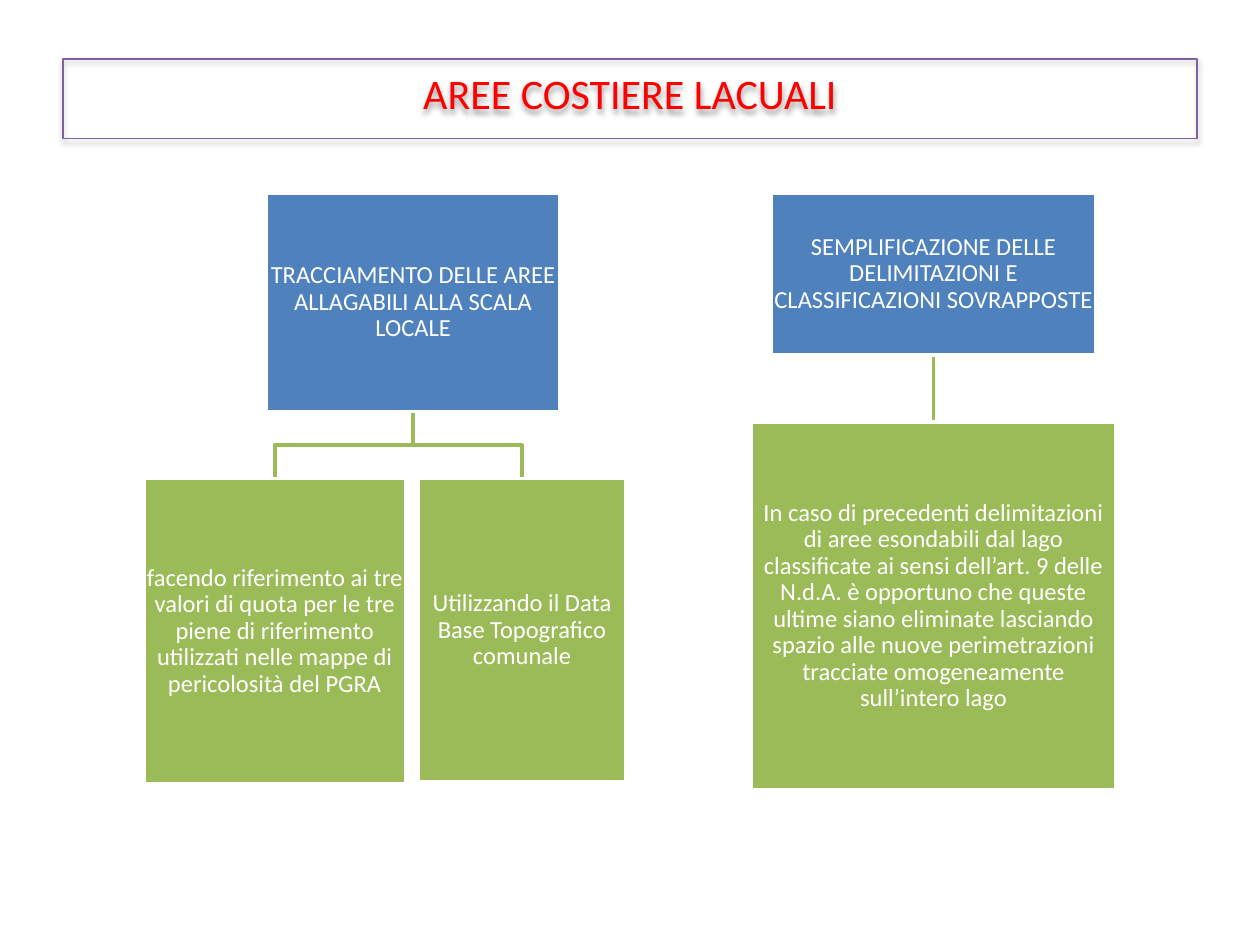
from lxml.etree import SubElement
from pptx import Presentation
from pptx.dml.color import RGBColor
from pptx.enum.shapes import MSO_CONNECTOR as Connector, MSO_SHAPE as Shape
from pptx.enum.text import MSO_ANCHOR as Anchor, PP_ALIGN as Align
from pptx.oxml.ns import qn
from pptx.util import Cm, Pt

# Content: lengths in cm
COLORS = {"title": "FF0000", "frame": "7D60A0", "parent": "4F81BD",
          "child": "9BBB59", "white": "FFFFFF", "shadow": "000000"}
FONT = "Calibri"
TITLE = "AREE COSTIERE LACUALI"
TREE_TOP, LEVEL_GAP = 3.89, 1.35
TREES = [
    {"text": "TRACCIAMENTO DELLE AREE ALLAGABILI ALLA SCALA LOCALE",
     "left": 5.37, "width": 5.92, "height": 4.41,
     "children": [
         {"text": "facendo riferimento ai tre valori di quota per le tre piene di "
                  "riferimento utilizzati nelle mappe di pericolosità del PGRA",
          "left": 2.9, "width": 5.28, "height": 6.15},
         {"text": "Utilizzando il Data Base Topografico comunale",
          "left": 8.43, "width": 4.19, "height": 6.12}]},
    {"text": "SEMPLIFICAZIONE DELLE DELIMITAZIONI E CLASSIFICAZIONI SOVRAPPOSTE",
     "left": 15.54, "width": 6.56, "height": 3.27,
     "children": [
         {"text": "In caso di precedenti delimitazioni di aree esondabili dal lago "
                  "classificate ai sensi dell’art. 9 delle N.d.A. è opportuno che "
                  "queste ultime siano eliminate lasciando spazio alle nuove "
                  "perimetrazioni tracciate omogeneamente sull’intero lago",
          "left": 15.14, "width": 7.36, "height": 7.42}]},
]


def color(name):
    return RGBColor.from_string(COLORS[name])


def set_line(shape, name, width):
    shape.line.color.rgb = color(name)
    shape.line.width = Pt(width)


def write(shape, text, size, color_name, anchor, inset_x, inset_y):
    frame = shape.text_frame
    frame.text = text
    frame.word_wrap = True
    frame.vertical_anchor = anchor
    frame.margin_left = frame.margin_right = Cm(inset_x)
    frame.margin_top = frame.margin_bottom = Cm(inset_y)
    paragraph = frame.paragraphs[0]
    paragraph.alignment = Align.CENTER
    font = paragraph.runs[0].font
    font.name, font.size, font.color.rgb = FONT, Pt(size), color(color_name)
    return paragraph


def add_box(slide, node, top, fill):
    box = slide.shapes.add_shape(Shape.RECTANGLE, Cm(node["left"]), Cm(top),
                                 Cm(node["width"]), Cm(node["height"]))
    box.shadow.inherit = False
    box.fill.solid()
    box.fill.fore_color.rgb = color(fill)
    set_line(box, "white", 2)
    write(box, node["text"], 14, "white", Anchor.MIDDLE, 0.02, 0.02).line_spacing = 0.9
    return box


def center(node):
    return node["left"] + node["width"] / 2


def add_elbow(slide, start_x, end_x, top, bottom):
    middle = (top + bottom) / 2
    builder = slide.shapes.build_freeform(Cm(start_x), Cm(top))
    builder.add_line_segments([(Cm(start_x), Cm(middle)), (Cm(end_x), Cm(middle)),
                               (Cm(end_x), Cm(bottom))], close=False)
    elbow = builder.convert_to_shape()
    elbow.shadow.inherit = False
    elbow.fill.background()
    set_line(elbow, "child", 2)


def add_straight(slide, x, top, bottom):
    link = slide.shapes.add_connector(Connector.STRAIGHT, Cm(x), Cm(top), Cm(x), Cm(bottom))
    set_line(link, "child", 2)
    SubElement(link._element.spPr, qn("a:effectLst"))
    return link


def add_title(slide):
    title = slide.shapes.add_shape(Shape.RECTANGLE, Cm(1.27), Cm(1.19), Cm(22.86), Cm(1.6))
    title.fill.background()
    set_line(title, "frame", 0.75)
    write(title, TITLE, 24, "title", Anchor.TOP, 0.25, 0.18)
    # Soft shadow straight below
    effects = SubElement(title._element.spPr, qn("a:effectLst"))
    shadow = SubElement(effects, qn("a:outerShdw"), blurRad="40000", dist="20000",
                        dir="5400000", rotWithShape="0")
    tint = SubElement(shadow, qn("a:srgbClr"), val=COLORS["shadow"])
    SubElement(tint, qn("a:alpha"), val="38000")


def add_tree(slide, tree):
    bottom = TREE_TOP + tree["height"]
    child_top = bottom + LEVEL_GAP
    children = tree["children"]
    # Links lie behind the boxes
    link = None
    if len(children) == 1:
        link = add_straight(slide, center(tree), bottom, child_top)
    else:
        for child in children:
            add_elbow(slide, center(tree), center(child), bottom, child_top)
    # Boxes
    parent = add_box(slide, tree, TREE_TOP, "parent")
    boxes = [add_box(slide, child, child_top, "child") for child in children]
    if link is not None:
        link.begin_connect(parent, 2)
        link.end_connect(boxes[0], 0)


def main():
    presentation = Presentation()
    presentation.slide_width, presentation.slide_height = Cm(25.4), Cm(19.05)
    slide = presentation.slides.add_slide(presentation.slide_layouts[6])
    add_title(slide)
    for tree in TREES:
        add_tree(slide, tree)
    presentation.save("out.pptx")


if __name__ == "__main__":
    main()
